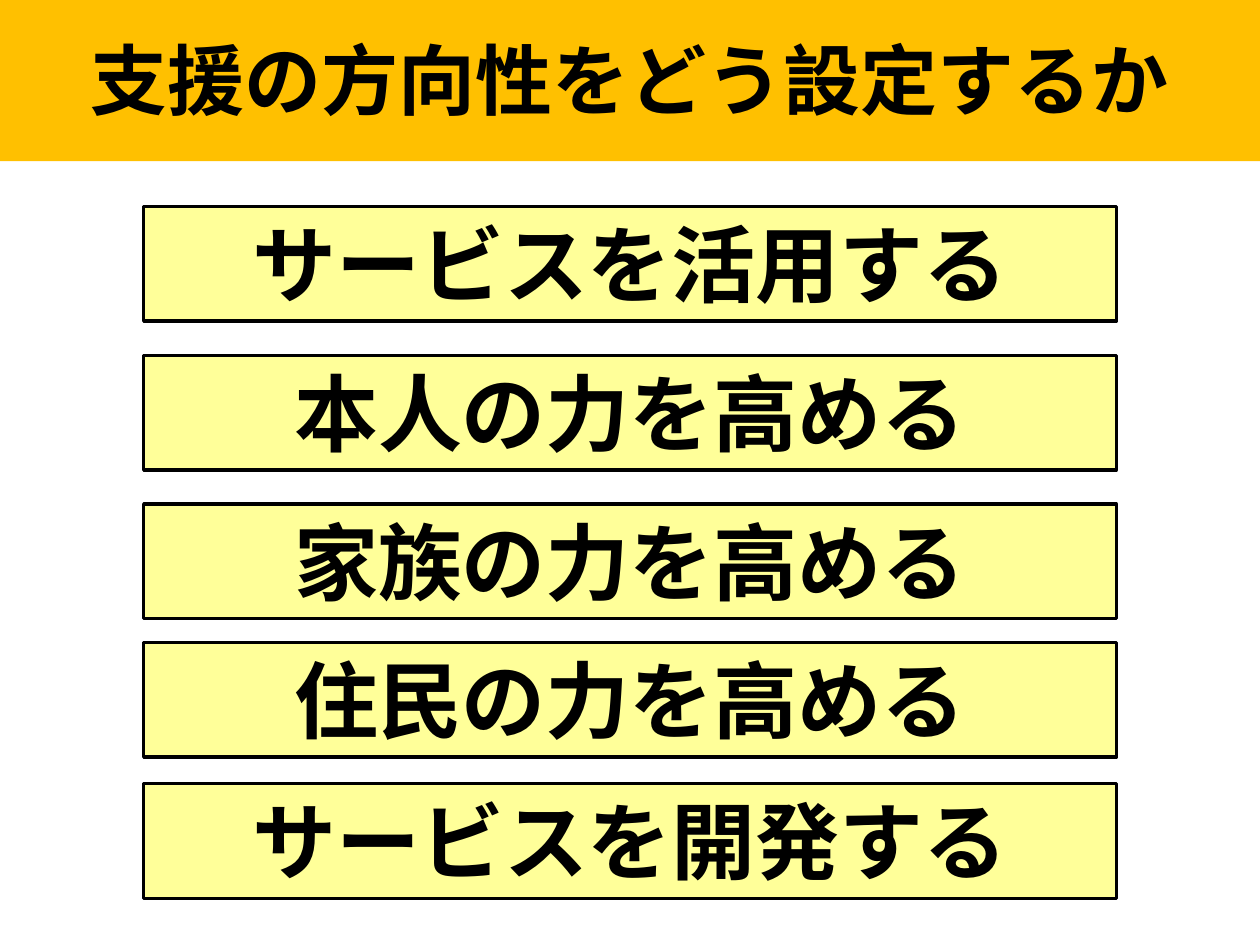
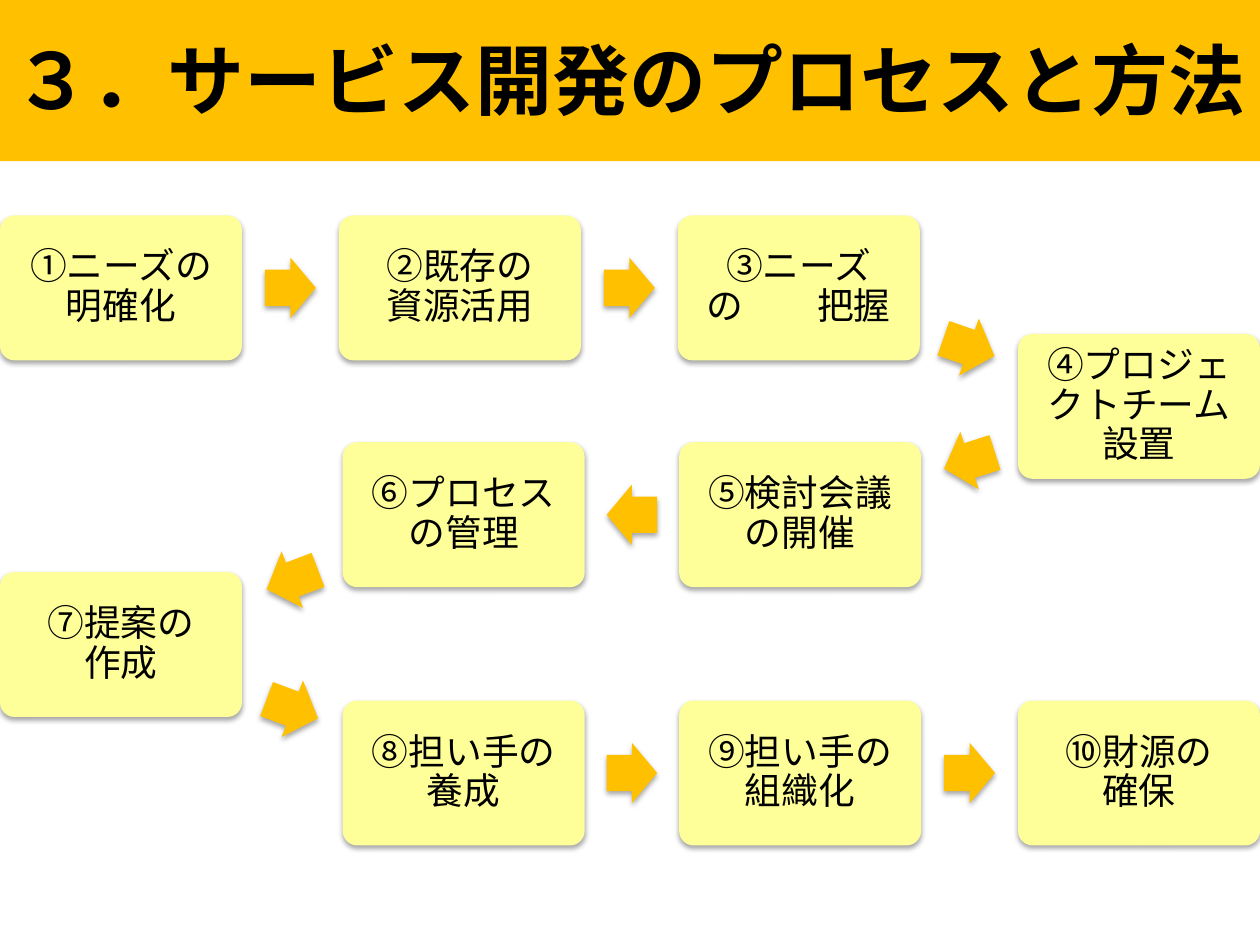
import math

from lxml import etree
from pptx import Presentation
from pptx.dml.color import RGBColor
from pptx.enum.shapes import MSO_SHAPE
from pptx.enum.text import MSO_ANCHOR, PP_ALIGN
from pptx.oxml.ns import qn
from pptx.util import Inches, Pt

RECTANGLE = MSO_SHAPE.RECTANGLE
ROUNDED = MSO_SHAPE.ROUNDED_RECTANGLE
ARROW = MSO_SHAPE.RIGHT_ARROW
TOP, MIDDLE = MSO_ANCHOR.TOP, MSO_ANCHOR.MIDDLE
CENTER = PP_ALIGN.CENTER

ORANGE, YELLOW, BLACK = "FFC000", "FFFF99", "000000"
GAP_MARK = "|"

DIRECTIONS = [
    ("サービスを活用する", 1.64),
    ("本人の力を高める", 2.82),
    ("家族の力を高める", 4.0),
    ("住民の力を高める", 5.1),
    ("サービスを開発する", 6.22),
]

STEP_WIDTH, STEP_HEIGHT = 1.92, 1.15
STEPS = [
    ("①ニーズの\n明確化", 0, 1.71),
    ("②既存の\n資源活用", 2.69, 1.71),
    ("③ニーズ\nの|把握", 5.38, 1.71),
    ("④プロジェクトチーム設置", 8.08, 2.65),
    ("⑤検討会議の開催", 5.39, 3.51),
    ("⑥プロセスの管理", 2.72, 3.51),
    ("⑦提案の\n作成", 0, 4.54),
    ("⑧担い手の\n養成", 2.72, 5.56),
    ("⑨担い手の\n組織化", 5.39, 5.56),
    ("⑩財源の\n確保", 8.08, 5.56),
]


def color(value):
    """Turn a hex string into a colour."""
    return RGBColor.from_string(value)


def add_box(slide, kind, left, top, width, height, fill, line=None):
    """Add a filled preset shape without shadow, outlined if a line colour is given."""
    shape = slide.shapes.add_shape(
        kind, Inches(left), Inches(top), Inches(width), Inches(height))
    shape.fill.solid()
    shape.fill.fore_color.rgb = color(fill)
    if line:
        shape.line.color.rgb = color(line)
        shape.line.width = Pt(2)
    else:
        shape.line.fill.background()
    shape.shadow.inherit = False
    return shape


def add_soft_shadow(shape):
    """Give the shape a faint shadow straight below it."""
    effects = shape.element.spPr.find(qn("a:effectLst"))
    shadow = etree.SubElement(
        effects, qn("a:outerShdw"), blurRad=str(Pt(3.1)), dist=str(Pt(1.8)),
        dir="5400000", rotWithShape="0")
    shade = etree.SubElement(shadow, qn("a:srgbClr"), val=BLACK)
    etree.SubElement(shade, qn("a:alpha"), val="35000")


def write_text(shape, text, size, font="Calibri", bold=False, anchor=MIDDLE,
               inset=None, spacing=None):
    """Write centred text; a gap mark leaves two characters of space."""
    frame = shape.text_frame
    frame.word_wrap = True
    frame.vertical_anchor = anchor
    if inset is not None:
        frame.margin_left = frame.margin_right = Inches(inset)
        frame.margin_top = frame.margin_bottom = Inches(inset)
    paragraph = frame.paragraphs[0]
    paragraph.alignment = CENTER
    if spacing:
        paragraph.line_spacing = spacing
    for number, line in enumerate(text.split("\n")):
        if number:
            paragraph.add_line_break()
        pieces = line.split(GAP_MARK)
        for position, piece in enumerate(pieces, 1):
            run = paragraph.add_run()
            run.text = piece
            run.font.name = font
            run.font.size = Pt(size)
            run.font.bold = bold
            run.font.color.rgb = color(BLACK)
            if position < len(pieces):
                run._r.get_or_add_rPr().set("spc", str(size * 200))


def add_title_band(slide, title):
    """Add the orange band with the slide title."""
    band = add_box(slide, RECTANGLE, 0, -0.03, 10, 1.31, ORANGE)
    write_text(band, title, 44, bold=True)


def add_direction(slide, text, top):
    """Add one outlined direction box."""
    box = add_box(slide, RECTANGLE, 1.14, top, 7.72, 0.91, YELLOW, BLACK)
    write_text(box, text, 48, font="Arial", bold=True, anchor=TOP)


def add_step(slide, text, left, top):
    """Add one rounded process step."""
    step = add_box(slide, ROUNDED, left, top, STEP_WIDTH, STEP_HEIGHT, YELLOW)
    step.adjustments[0] = 0.1
    add_soft_shadow(step)
    write_text(step, text, 21, inset=0.09, spacing=0.9)


def add_step_arrow(slide, start, end):
    """Add a block arrow halfway between two steps, turned towards the second."""
    across, down = end[0] - start[0], end[1] - start[1]
    width, height = 0.15 * math.hypot(across, down), 0.48
    left = (start[0] + end[0] + STEP_WIDTH - width) / 2
    top = (start[1] + end[1] + STEP_HEIGHT - height) / 2
    arrow = add_box(slide, ARROW, left, top, width, height, ORANGE)
    arrow.adjustments[0] = 0.6
    arrow.adjustments[1] = 0.5
    arrow.rotation = math.degrees(math.atan2(down, across))
    add_soft_shadow(arrow)


def build_directions(slide):
    """Build the list of support directions."""
    for text, top in DIRECTIONS:
        add_direction(slide, text, top)
    add_title_band(slide, "支援の方向性をどう設定するか")


def build_process(slide):
    """Build the winding service development process."""
    for text, left, top in STEPS:
        add_step(slide, text, left, top)
    for start, end in zip(STEPS, STEPS[1:]):
        add_step_arrow(slide, start[1:], end[1:])
    add_title_band(slide, "３．サービス開発のプロセスと方法")


def main():
    """Build and save the presentation."""
    presentation = Presentation()
    presentation.slide_width = Inches(10)
    presentation.slide_height = Inches(7.5)
    blank = presentation.slide_layouts[6]
    for build in (build_directions, build_process):
        build(presentation.slides.add_slide(blank))
    presentation.save("out.pptx")


if __name__ == "__main__":
    main()
